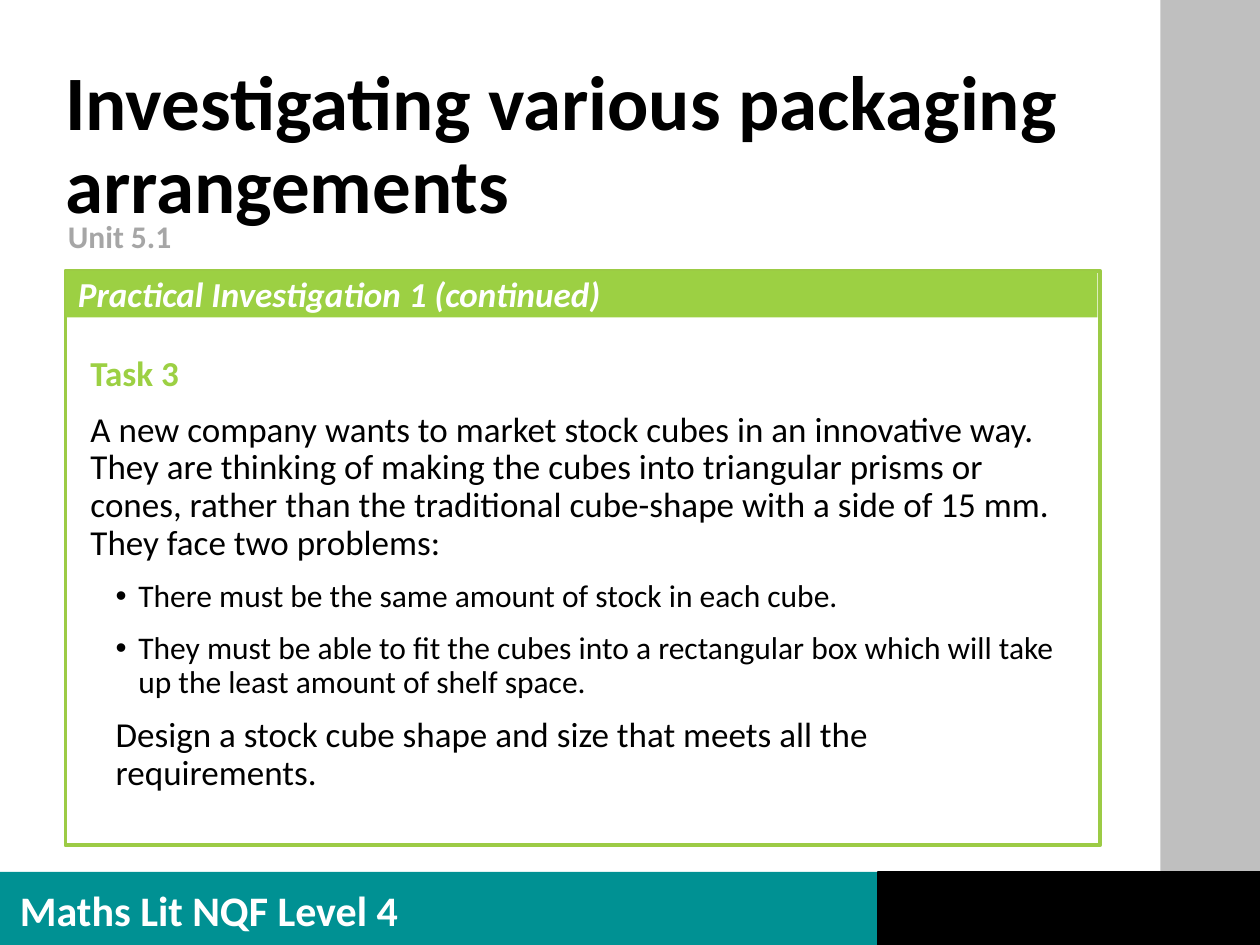
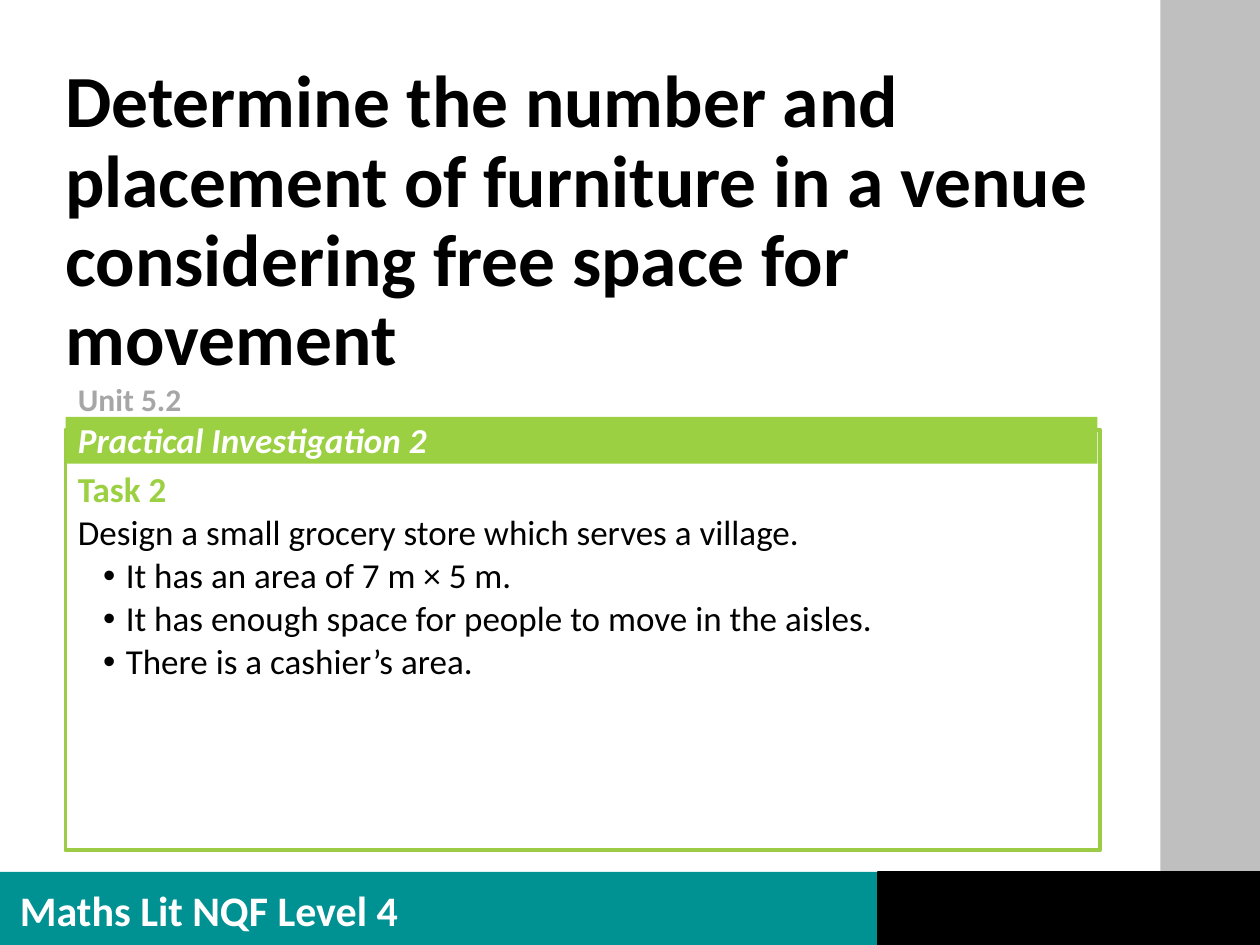
from dataclasses import dataclass

from lxml.etree import SubElement
from pptx import Presentation
from pptx.dml.color import RGBColor
from pptx.enum.shapes import MSO_SHAPE
from pptx.enum.text import MSO_ANCHOR, PP_ALIGN
from pptx.oxml.ns import qn
from pptx.shapes.autoshape import Shape
from pptx.slide import Slide
from pptx.util import Inches, Pt

FONT = "Calibri"
COLORS = {
    "black": "000000",
    "white": "FFFFFF",
    "side": "BFBFBF",
    "footer": "009193",
    "unit": "A6A6A6",
    "frame": "9CCB45",
    "accent": "9CD043",
}
STYLES = {
    "footer": {"size": Pt(24), "bold": True},
    "unit": {"size": Pt(18), "bold": True},
    "band": {"size": Pt(20), "bold": True, "italic": True},
    "task": {"size": Pt(20), "bold": True},
    "body": {"size": Pt(20), "bold": False},
    "small": {"size": Pt(18), "bold": False},
}


@dataclass(frozen=True)
class Area:
    left: float
    top: float
    width: float
    height: float

    def lengths(self) -> tuple[Inches, ...]:
        return tuple(Inches(v) for v in (self.left, self.top, self.width, self.height))


@dataclass(frozen=True)
class Panel:
    area: Area
    fill: str | None = None
    line: str | None = None
    weight: float = 1


@dataclass(frozen=True)
class Line:
    text: str
    style: dict
    color: str = "black"
    space_before: float = 0
    spacing: float = 0.9
    indent: float = 0
    bullet: bool = False


@dataclass(frozen=True)
class Lesson:
    title: str
    title_size: float
    unit: str
    unit_area: Area
    frame: Area
    band_top: float
    band: str
    task_area: Area
    task: list[Line]


SHARED_PANELS = [
    Panel(Area(9.21, 0, 0.79, 7.49), "side"),
    Panel(Area(0, 6.92, 10, 0.58), "footer"),
    Panel(Area(6.97, 6.92, 3.03, 0.58), "black", "black"),
]
FOOTER_AREA = Area(0.06, 6.97, 3.75, 0.5)
TITLE_AREA = Area(0.42, 0.46, 8.65, 0.79)

LESSONS = [
    Lesson(
        title="Investigating various packaging arrangements",
        title_size=44,
        unit="Unit 5.1",
        unit_area=Area(0.44, 1.71, 8.65, 0.33),
        frame=Area(0.52, 2.15, 8.21, 4.56),
        band_top=2.15,
        band="Practical Investigation 1 (continued)",
        task_area=Area(0.62, 2.78, 7.96, 3.85),
        task=[
            Line("Task 3", STYLES["task"], "accent"),
            Line(
                "A new company wants to market stock cubes in an innovative way. "
                "They are thinking of making the cubes into triangular prisms or cones, "
                "rather than the traditional cube-shape with a side of 15 mm. "
                "They face two problems:",
                STYLES["body"],
                space_before=10,
            ),
            Line(
                "There must be the same amount of stock in each cube.",
                STYLES["small"],
                space_before=10,
                bullet=True,
            ),
            Line(
                "They must be able to fit the cubes into a rectangular box "
                "which will take up the least amount of shelf space.",
                STYLES["small"],
                space_before=10,
                bullet=True,
            ),
            Line(
                "Design a stock cube shape and size that meets all the requirements.",
                STYLES["body"],
                space_before=10,
                indent=0.2,
            ),
        ],
    ),
    Lesson(
        title="Determine the number and placement of furniture in a venue "
        "considering free space for movement",
        title_size=42,
        unit="Unit 5.2",
        unit_area=Area(0.52, 3, 8.65, 0.33),
        frame=Area(0.52, 3.41, 8.21, 3.34),
        band_top=3.31,
        band="Practical Investigation 2",
        task_area=Area(0.52, 3.7, 8.21, 2.92),
        task=[
            Line("Task 2", STYLES["task"], "accent"),
            Line(
                "Design a small grocery store which serves a village.",
                STYLES["body"],
                space_before=3,
            ),
            *(
                Line(text, STYLES["body"], space_before=3, bullet=True)
                for text in (
                    "It has an area of 7 m × 5 m.",
                    "It has enough space for people to move in the aisles.",
                    "There is a cashier’s area.",
                )
            ),
        ],
    ),
]


def color(name: str) -> RGBColor:
    return RGBColor.from_string(COLORS[name])


def write_lines(box: Shape, lines: list[Line]) -> None:
    frame = box.text_frame
    frame.word_wrap = True
    frame.vertical_anchor = MSO_ANCHOR.TOP
    for index, line in enumerate(lines):
        para = frame.paragraphs[0] if index == 0 else frame.add_paragraph()
        layout = {
            "alignment": PP_ALIGN.LEFT,
            "line_spacing": line.spacing,
            "space_before": Pt(line.space_before),
        }
        for name, value in layout.items():
            setattr(para, name, value)
        properties = para._p.get_or_add_pPr()
        properties.set("marL", str(Inches(0.38 if line.bullet else line.indent)))
        properties.set("indent", str(Inches(-0.18 if line.bullet else 0)))
        if line.bullet:
            SubElement(properties, qn("a:buFont"), typeface="Arial")
            SubElement(properties, qn("a:buChar"), char="•")
        span = para.add_run()
        span.text = line.text
        for name, value in {"name": FONT, **line.style}.items():
            setattr(span.font, name, value)
        span.font.color.rgb = color(line.color)


def add_panel(page: Slide, panel: Panel) -> Shape:
    box = page.shapes.add_shape(MSO_SHAPE.RECTANGLE, *panel.area.lengths())
    box.shadow.inherit = False
    if panel.fill:
        box.fill.solid()
        box.fill.fore_color.rgb = color(panel.fill)
    else:
        box.fill.background()
    if panel.line:
        box.line.color.rgb = color(panel.line)
        box.line.width = Pt(panel.weight)
    else:
        box.line.fill.background()
    return box


def add_text(page: Slide, area: Area, lines: list[Line]) -> None:
    write_lines(page.shapes.add_textbox(*area.lengths()), lines)


def add_lesson(page: Slide, lesson: Lesson) -> None:
    for panel in SHARED_PANELS:
        add_panel(page, panel)
    footer = Line("Maths Lit NQF Level 4", STYLES["footer"], "white", spacing=1.0)
    add_text(page, FOOTER_AREA, [footer])
    title_style = {"size": Pt(lesson.title_size), "bold": True}
    add_text(page, TITLE_AREA, [Line(lesson.title, title_style)])
    add_text(page, lesson.unit_area, [Line(lesson.unit, STYLES["unit"], "unit")])
    add_panel(page, Panel(lesson.frame, line="frame", weight=2.25))
    band = add_panel(page, Panel(Area(0.52, lesson.band_top, 8.19, 0.37), "accent"))
    write_lines(band, [Line(lesson.band, STYLES["band"], "white")])
    add_text(page, lesson.task_area, lesson.task)


def main() -> None:
    deck = Presentation()
    deck.slide_width = Inches(10)
    deck.slide_height = Inches(7.5)
    for lesson in LESSONS:
        add_lesson(deck.slides.add_slide(deck.slide_layouts[6]), lesson)
    deck.save("out.pptx")


if __name__ == "__main__":
    main()
